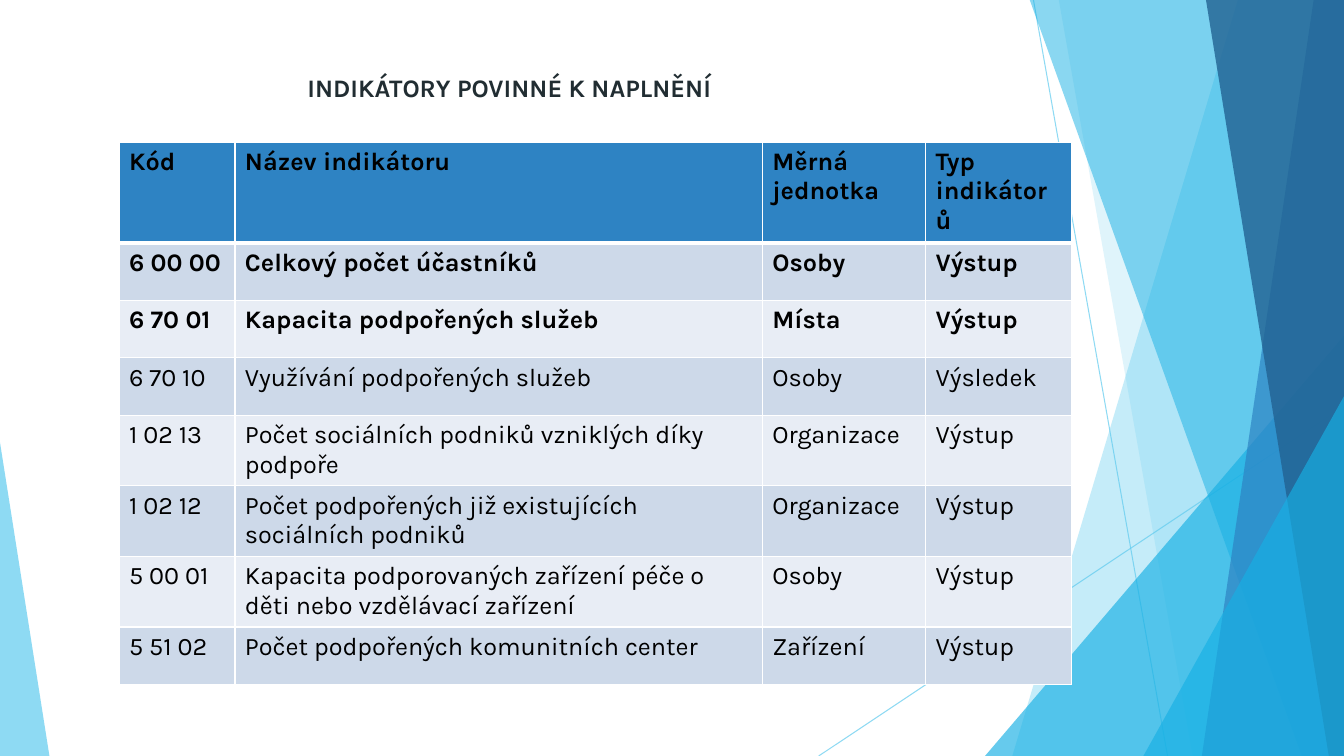
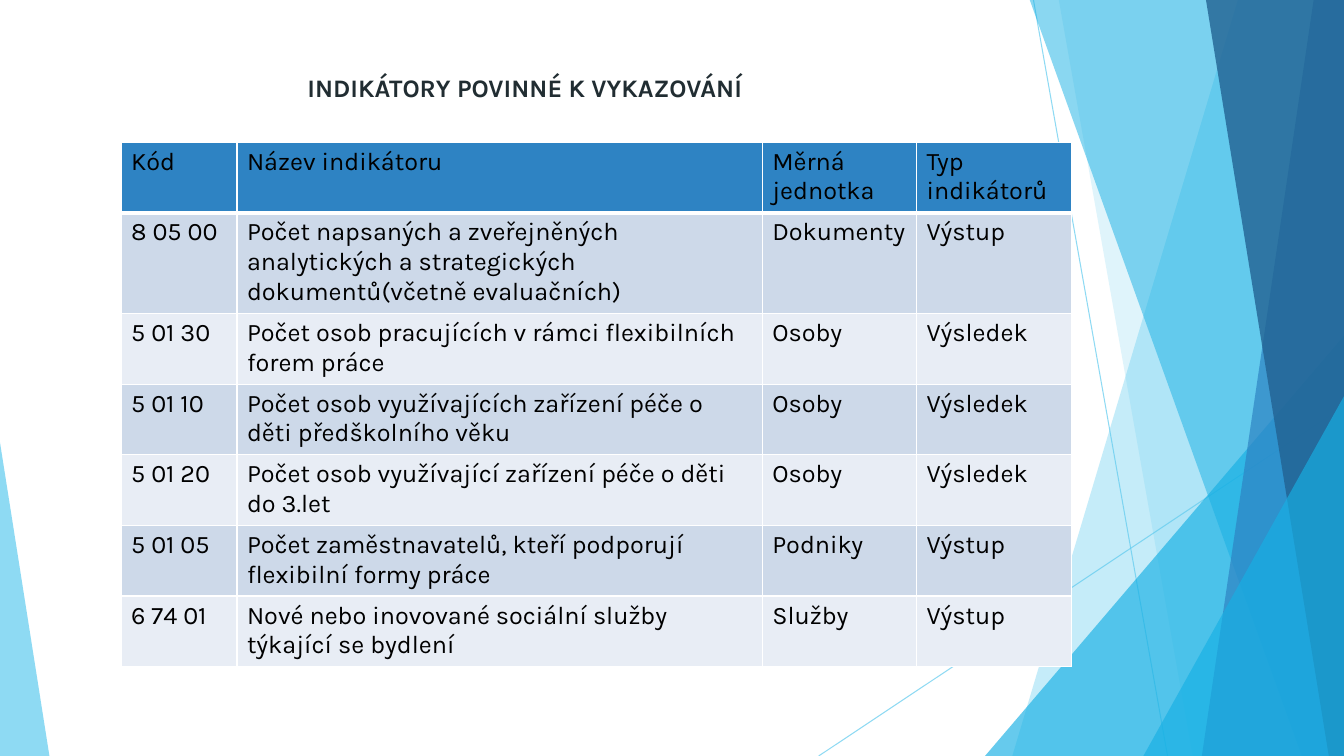
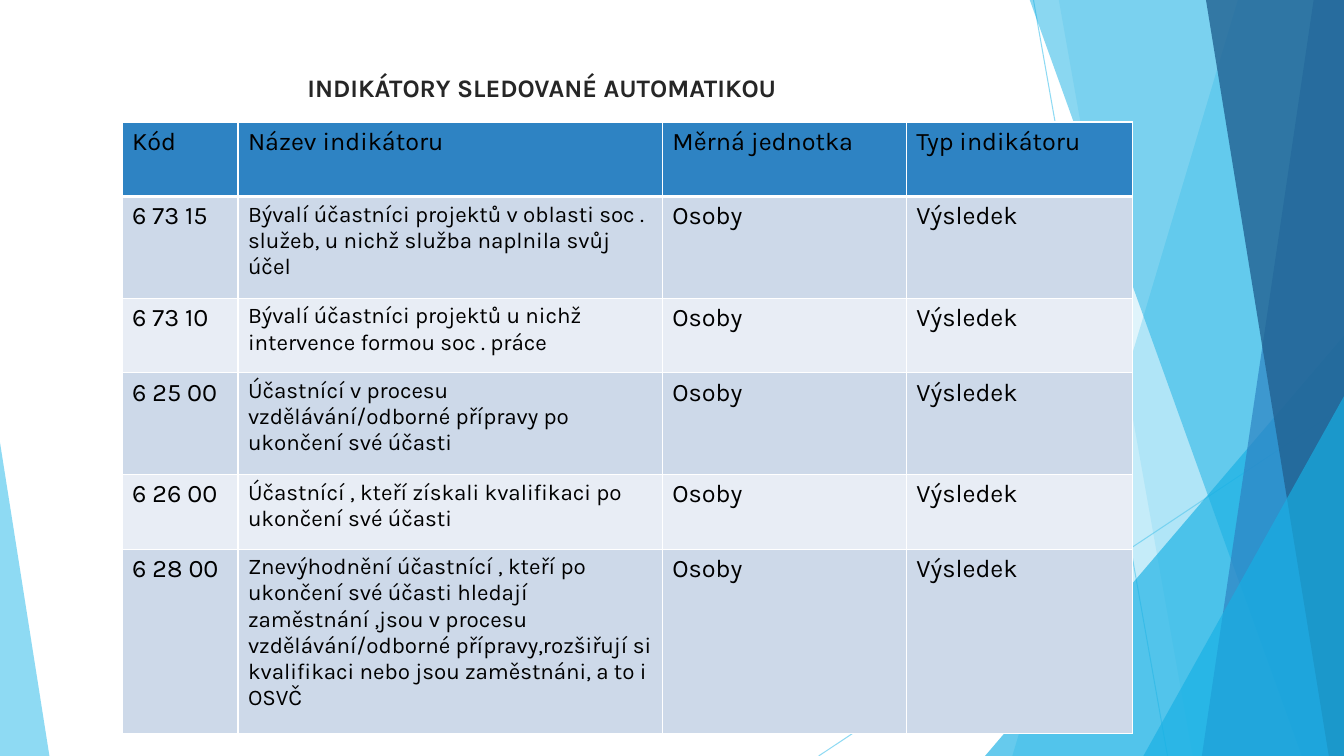
from lxml.etree import SubElement
from pptx import Presentation
from pptx.dml.color import RGBColor
from pptx.enum.shapes import MSO_CONNECTOR, MSO_SHAPE
from pptx.oxml.ns import qn
from pptx.util import Inches, Pt

# Shared look
WIDTH, HEIGHT = 13.33, 7.5
FONT = "Karla"
SKY, CYAN, BLUE, NAVY = "5FCBEF", "17B0E4", "2E83C3", "226292"
WHITE, BLACK = "FFFFFF", "000000"
ROW_FILLS = ("CDD9E9", "E8EDF5")
BODY_SIZE = 18

RAYS = [((10.25, 0), (11.58, HEIGHT)), ((WIDTH, 4.03), (8.12, HEIGHT))]

# Bands reach the right edge: top left x, bottom left x, colour, opacity
BACK_BANDS = [(12.28, 10.04, SKY, 36), (10.5, 11.83, SKY, 20)]
FRONT_BANDS = [
    (10.21, 12.91, CYAN, 50),
    (13.03, 11.92, BLUE, 70),
    (11.96, 13.18, NAVY, 80),
]

# Corners stand on the bottom edge: left, top, width, apex, colour, opacity
BACK_CORNERS = [(9.77, 3.33, 3.56, 1, CYAN, 66)]
FRONT_CORNERS = [(11.34, 3.93, 1.99, 1, CYAN, 66), (0, 4.39, 0.49, 0, SKY, 70)]

# Table contents
REQUIRED_ROWS = [
    ("Kód", "Název indikátoru", "Měrná jednotka", "Typ indikátorů"),
    ("6 00 00", "Celkový počet účastníků", "Osoby", "Výstup"),
    ("6 70 01", "Kapacita podpořených služeb", "Místa", "Výstup"),
    ("6 70 10", "Využívání podpořených služeb", "Osoby", "Výsledek"),
    ("1 02 13", "Počet sociálních podniků vzniklých díky podpoře", "Organizace", "Výstup"),
    ("1 02 12", "Počet podpořených již existujících sociálních podniků", "Organizace", "Výstup"),
    ("5 00 01", "Kapacita podporovaných zařízení péče o děti nebo vzdělávací zařízení",
     "Osoby", "Výstup"),
    ("5 51 02", "Počet podpořených komunitních center", "Zařízení", "Výstup"),
]
REPORTED_ROWS = [
    ("Kód", "Název indikátoru", "Měrná jednotka", "Typ indikátorů"),
    ("8 05 00", "Počet napsaných a zveřejněných analytických a strategických "
     "dokumentů(včetně evaluačních)", "Dokumenty", "Výstup"),
    ("5 01 30", "Počet osob pracujících v rámci flexibilních forem práce", "Osoby", "Výsledek"),
    ("5 01 10", "Počet osob využívajících zařízení péče o děti předškolního věku",
     "Osoby", "Výsledek"),
    ("5 01 20", "Počet osob využívající zařízení péče o děti do 3.let", "Osoby", "Výsledek"),
    ("5 01 05", "Počet zaměstnavatelů, kteří podporují flexibilní formy práce",
     "Podniky", "Výstup"),
    ("6 74 01", "Nové nebo inovované sociální služby týkající se bydlení", "Služby", "Výstup"),
]
AUTOMATIC_ROWS = [
    ("Kód", "Název indikátoru", "Měrná jednotka", "Typ indikátoru"),
    ("6 73 15", "Bývalí účastníci projektů v oblasti soc . služeb, u nichž služba "
     "naplnila svůj účel", "Osoby", "Výsledek"),
    ("6 73 10", "Bývalí účastníci projektů u nichž intervence formou soc . práce",
     "Osoby", "Výsledek"),
    ("6 25 00", "Účastnící v procesu vzdělávání/odborné přípravy po ukončení své účasti",
     "Osoby", "Výsledek"),
    ("6 26 00", "Účastnící , kteří získali kvalifikaci po ukončení své účasti",
     "Osoby", "Výsledek"),
    ("6 28 00", "Znevýhodnění účastnící , kteří po ukončení své účasti hledají zaměstnání "
     ",jsou v procesu vzdělávání/odborné přípravy,rozšiřují si kvalifikaci nebo jsou "
     "zaměstnáni, a to i OSVČ", "Osoby", "Výsledek"),
]


def color(value):
    return RGBColor.from_string(value)


def set_opacity(properties, percent):
    for element in properties.iter(qn("a:srgbClr")):
        SubElement(element, qn("a:alpha"), val=str(percent * 1000))


def paint(shape, fill, opacity):
    shape.shadow.inherit = False
    shape.fill.solid()
    shape.fill.fore_color.rgb = color(fill)
    set_opacity(shape.element.spPr, opacity)
    shape.line.fill.background()


def format_text(text_frame, size, text_color, bold):
    for paragraph in text_frame.paragraphs:
        for run in paragraph.runs:
            run.font.name = FONT
            run.font.size = Pt(size)
            run.font.bold = bold
            run.font.color.rgb = color(text_color)


# Background decoration
def add_ray(slide, start, end):
    points = [Inches(value) for value in (*start, *end)]
    connector = slide.shapes.add_connector(MSO_CONNECTOR.STRAIGHT, *points)
    connector.line.width = Pt(0.75)
    connector.line.color.rgb = color(SKY)
    properties = connector.element.spPr
    set_opacity(properties, 70)
    SubElement(properties, qn("a:effectLst"))


def add_band(slide, top_x, bottom_x, fill, opacity):
    top = -0.01
    outline = [(top_x, top), (WIDTH, top), (WIDTH, HEIGHT), (bottom_x, HEIGHT)]
    points = [(Inches(x), Inches(y)) for x, y in outline]
    builder = slide.shapes.build_freeform(*points[0])
    builder.add_line_segments(points[1:], close=True)
    paint(builder.convert_to_shape(), fill, opacity)


def add_corner(slide, left, top, width, apex, fill, opacity):
    shape = slide.shapes.add_shape(
        MSO_SHAPE.ISOSCELES_TRIANGLE,
        Inches(left), Inches(top), Inches(width), Inches(HEIGHT - top))
    shape.adjustments[0] = apex
    paint(shape, fill, opacity)


def add_decoration(slide):
    for ray in RAYS:
        add_ray(slide, *ray)
    for bands, corners in ((BACK_BANDS, BACK_CORNERS), (FRONT_BANDS, FRONT_CORNERS)):
        for band in bands:
            add_band(slide, *band)
        for corner in corners:
            add_corner(slide, *corner)


# Title and table
def add_title(slide, text, text_color):
    box = slide.shapes.add_textbox(Inches(2.95), Inches(0.67), Inches(7.19), Inches(0.45))
    box.text_frame.word_wrap = True
    box.text_frame.text = text
    format_text(box.text_frame, BODY_SIZE, text_color, True)


def add_border(cell, side, width):
    line = SubElement(cell._tc.get_or_add_tcPr(), qn(f"a:ln{side}"), w=str(Pt(width)))
    fill = SubElement(line, qn("a:solidFill"))
    SubElement(fill, qn("a:srgbClr"), val=WHITE)


def format_cell(cell, row_index, size, bold):
    thick_side = {0: "B", 1: "T"}.get(row_index)
    for side in "LRTB":
        add_border(cell, side, 3 if side == thick_side else 1)
    cell.fill.solid()
    fill = BLUE if row_index == 0 else ROW_FILLS[(row_index - 1) % 2]
    cell.fill.fore_color.rgb = color(fill)
    format_text(cell.text_frame, size, BLACK, bold)


def add_indicator_table(slide, left, top, widths, heights, rows, bold_rows=0, name_size=BODY_SIZE):
    frame = slide.shapes.add_table(
        len(rows), len(widths), Inches(left), Inches(top),
        Inches(sum(widths)), Inches(sum(heights)))
    table = frame.table
    table.horz_banding = False
    for column, width in zip(table.columns, widths):
        column.width = Inches(width)
    for row, height in zip(table.rows, heights):
        row.height = Inches(height)
    for row_index, values in enumerate(rows):
        for column_index, value in enumerate(values):
            cell = table.cell(row_index, column_index)
            cell.text_frame.text = value
            is_name = row_index > 0 and column_index == 1
            size = name_size if is_name else BODY_SIZE
            format_cell(cell, row_index, size, row_index < bold_rows)


def add_indicator_slide(presentation, title, title_color, **table_options):
    slide = presentation.slides.add_slide(presentation.slide_layouts[6])
    add_decoration(slide)
    add_title(slide, title, title_color)
    add_indicator_table(slide, **table_options)


def main():
    presentation = Presentation()
    presentation.slide_width = Inches(WIDTH)
    presentation.slide_height = Inches(HEIGHT)

    add_indicator_slide(
        presentation, "INDIKÁTORY POVINNÉ K NAPLNĚNÍ", "212D32",
        left=1.18, top=1.41, widths=[1.15, 5.23, 1.62, 1.45],
        heights=[0.56] + [0.57] * 7, rows=REQUIRED_ROWS, bold_rows=3)
    add_indicator_slide(
        presentation, "INDIKÁTORY POVINNÉ K VYKAZOVÁNÍ", "212D32",
        left=1.2, top=1.41, widths=[1.15, 5.21, 1.53, 1.54],
        heights=[0.7, 1] + [0.7] * 5, rows=REPORTED_ROWS)
    add_indicator_slide(
        presentation, "INDIKÁTORY SLEDOVANÉ AUTOMATIKOU", "262626",
        left=1.21, top=1.21, widths=[1.15, 4.21, 2.42, 2.24],
        heights=[0.74, 1.01, 0.74, 1.01, 0.74, 1.83], rows=AUTOMATIC_ROWS, name_size=16)

    presentation.save("out.pptx")


if __name__ == "__main__":
    main()
